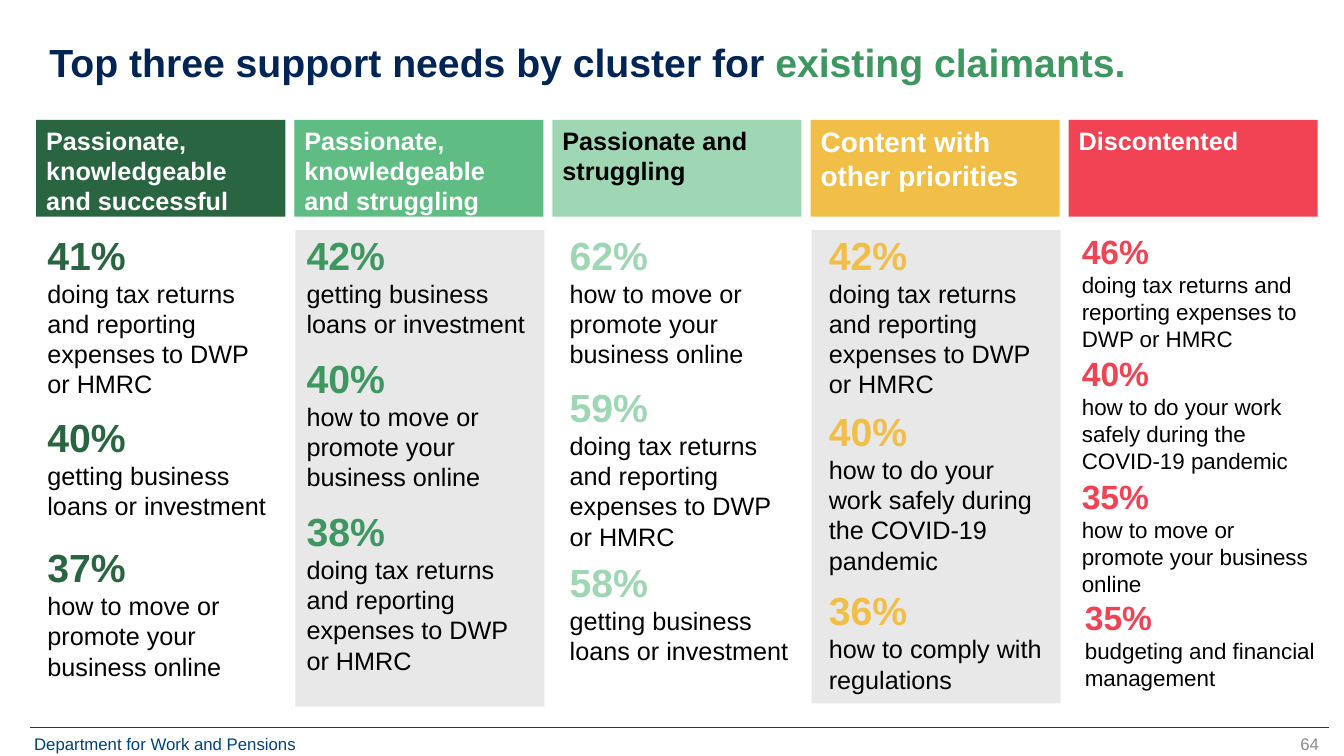
from pptx import Presentation
from pptx.dml.color import RGBColor
from pptx.enum.shapes import MSO_CONNECTOR as Connector, MSO_SHAPE as Shape
from pptx.enum.text import MSO_ANCHOR as Anchor, PP_ALIGN as Align
from pptx.oxml.ns import qn
from pptx.util import Inches, Pt
from lxml.etree import SubElement

NAVY = RGBColor(0x00, 0x25, 0x54)
BLUE = RGBColor(0x00, 0x43, 0x7B)
GREY = RGBColor(0x8C, 0x8C, 0x8C)
PANEL = RGBColor(0xE8, 0xE8, 0xE8)
WHITE = RGBColor(0xFF, 0xFF, 0xFF)
BLACK = RGBColor(0x00, 0x00, 0x00)
DARK_GREEN = RGBColor(0x29, 0x65, 0x40)
GREEN = RGBColor(0x3E, 0x97, 0x60)
MID_GREEN = RGBColor(0x5F, 0xBD, 0x83)
PALE_GREEN = RGBColor(0x9F, 0xD7, 0xB5)
AMBER = RGBColor(0xF1, 0xBE, 0x48)
RED = RGBColor(0xF1, 0x43, 0x54)

COLUMN_LEFT, COLUMN_STEP, COLUMN_WIDTH = 0.36, 2.56, 2.47
HEADER_TOP, HEADER_HEIGHT = 1.19, 0.96
PANEL_TOP = 2.28

TAX = "doing tax returns and reporting expenses to DWP or HMRC"
LOANS = "getting business loans or investment"
ONLINE = "how to move or promote your business online"
COVID = "how to do your work safely during the COVID-19 pandemic"
RULES = "how to comply with regulations"
BUDGET = "budgeting and financial management"

# Each need: left, top, width, height, share, wording
CLUSTERS = [
    {"name": "Passionate, knowledgeable and successful", "fill": DARK_GREEN,
     "accent": DARK_GREEN,
     "needs": [(0.47, 2.29, 2.19, 1.68, "41%", TAX),
               (0.47, 4.1, 2.19, 1.08, "40%", LOANS),
               (0.47, 5.39, 2.19, 1.38, "37%", ONLINE)]},
    {"name": "Passionate, knowledgeable and struggling", "fill": MID_GREEN,
     "accent": GREEN, "panel_height": 4.73,
     "needs": [(3.04, 2.29, 2.19, 1.08, "42%", LOANS),
               (3.04, 3.51, 2.19, 1.38, "40%", ONLINE),
               (3.04, 5.03, 2.19, 1.68, "38%", TAX)]},
    {"name": "Passionate and struggling", "fill": PALE_GREEN,
     "accent": PALE_GREEN, "header_color": BLACK,
     "needs": [(5.65, 2.29, 2.19, 1.38, "62%", ONLINE),
               (5.65, 3.8, 2.19, 1.68, "59%", TAX),
               (5.65, 5.54, 2.19, 1.08, "58%", LOANS)]},
    {"name": "Content with other priorities", "fill": AMBER,
     "accent": AMBER, "header_size": 20, "panel_height": 4.7,
     "needs": [(8.22, 2.29, 2.19, 1.68, "42%", TAX),
               (8.22, 4.04, 2.19, 1.68, "40%", COVID),
               (8.22, 5.82, 2.19, 1.08, "36%", RULES)]},
    {"name": "Discontented", "fill": RED,
     "accent": RED, "need_sizes": (24, 16),
     "needs": [(10.73, 2.29, 2.24, 1.21, "46%", TAX),
               (10.73, 3.5, 2.19, 1.21, "40%", COVID),
               (10.73, 4.72, 2.33, 1.21, "35%", ONLINE),
               (10.76, 5.92, 2.31, 0.94, "35%", BUDGET)]},
]


class SlideBuilder:
    font_name = "Arial"

    def __init__(self, slide):
        self.slide = slide

    def set_text(self, shape, runs, inset=True, **paragraph_format):
        """Fill a shape with one paragraph of (text, size, colour, bold) runs."""
        frame = shape.text_frame
        frame.word_wrap = True
        frame.vertical_anchor = Anchor.TOP
        if not inset:
            for side in ("left", "top", "right", "bottom"):
                setattr(frame, f"margin_{side}", 0)
        paragraph = frame.paragraphs[0]
        for name, value in ({"alignment": Align.LEFT} | paragraph_format).items():
            setattr(paragraph, name, value)
        for text, size, color, bold in runs:
            if text == "\n":
                paragraph.add_line_break()
                continue
            run = paragraph.add_run()
            run.text = text
            style = {"name": self.font_name, "size": Pt(size), "bold": bold}
            for name, value in style.items():
                setattr(run.font, name, value)
            run.font.color.rgb = color

    def text(self, box, runs, **options):
        shape = self.slide.shapes.add_textbox(*map(Inches, box))
        self.set_text(shape, runs, **options)

    def rectangle(self, box, fill):
        shape = self.slide.shapes.add_shape(Shape.RECTANGLE, *map(Inches, box))
        shape.shadow.inherit = False
        shape.fill.solid()
        shape.fill.fore_color.rgb = fill
        shape.line.fill.background()
        return shape

    def rule(self, start, end, color, width):
        line = self.slide.shapes.add_connector(
            Connector.STRAIGHT, *map(Inches, start + end))
        line.line.color.rgb = color
        line.line.width = Pt(width)
        SubElement(line._element.spPr, qn("a:effectLst"))

    def need(self, box, share, wording, accent, sizes):
        share_size, wording_size = sizes
        runs = [(share, share_size, accent, True),
                ("\n", None, None, None),
                (wording, wording_size, BLACK, False)]
        self.text(box, runs, inset=False, space_before=Pt(4), space_after=Pt(4))

    def cluster(self, index, cluster):
        left = COLUMN_LEFT + index * COLUMN_STEP
        header = self.rectangle(
            (left, HEADER_TOP, COLUMN_WIDTH, HEADER_HEIGHT), cluster["fill"])
        self.set_text(header, [(cluster["name"], cluster.get("header_size", 18),
                                cluster.get("header_color", WHITE), True)])
        if "panel_height" in cluster:
            self.rectangle((left + 0.01, PANEL_TOP, COLUMN_WIDTH,
                            cluster["panel_height"]), PANEL)
        sizes = cluster.get("need_sizes", (28, 18))
        for *box, share, wording in cluster["needs"]:
            self.need(box, share, wording, cluster["accent"], sizes)


def main():
    presentation = Presentation()
    presentation.slide_width = Inches(13.33)
    presentation.slide_height = Inches(7.5)
    slide = presentation.slides.add_slide(presentation.slide_layouts[6])
    builder = SlideBuilder(slide)

    builder.rule((0.3, 7.22), (13.18, 7.22), BLUE, 0.5)
    builder.text((0.24, 7.23, 3.23, 0.3),
                 [("Department for Work and Pensions", 12, BLUE, False)],
                 alignment=Align.JUSTIFY)
    builder.text((10.18, 7.23, 3, 0.4), [("64", 12, GREY, False)],
                 alignment=Align.RIGHT)
    builder.text((0.49, 0.43, 12.27, 0.85),
                 [("Top three support needs by cluster for ", 28, NAVY, True),
                  ("existing claimants.", 28, GREEN, True)],
                 inset=False, line_spacing=0.9)
    for index, cluster in enumerate(CLUSTERS):
        builder.cluster(index, cluster)

    presentation.save("out.pptx")


if __name__ == "__main__":
    main()
